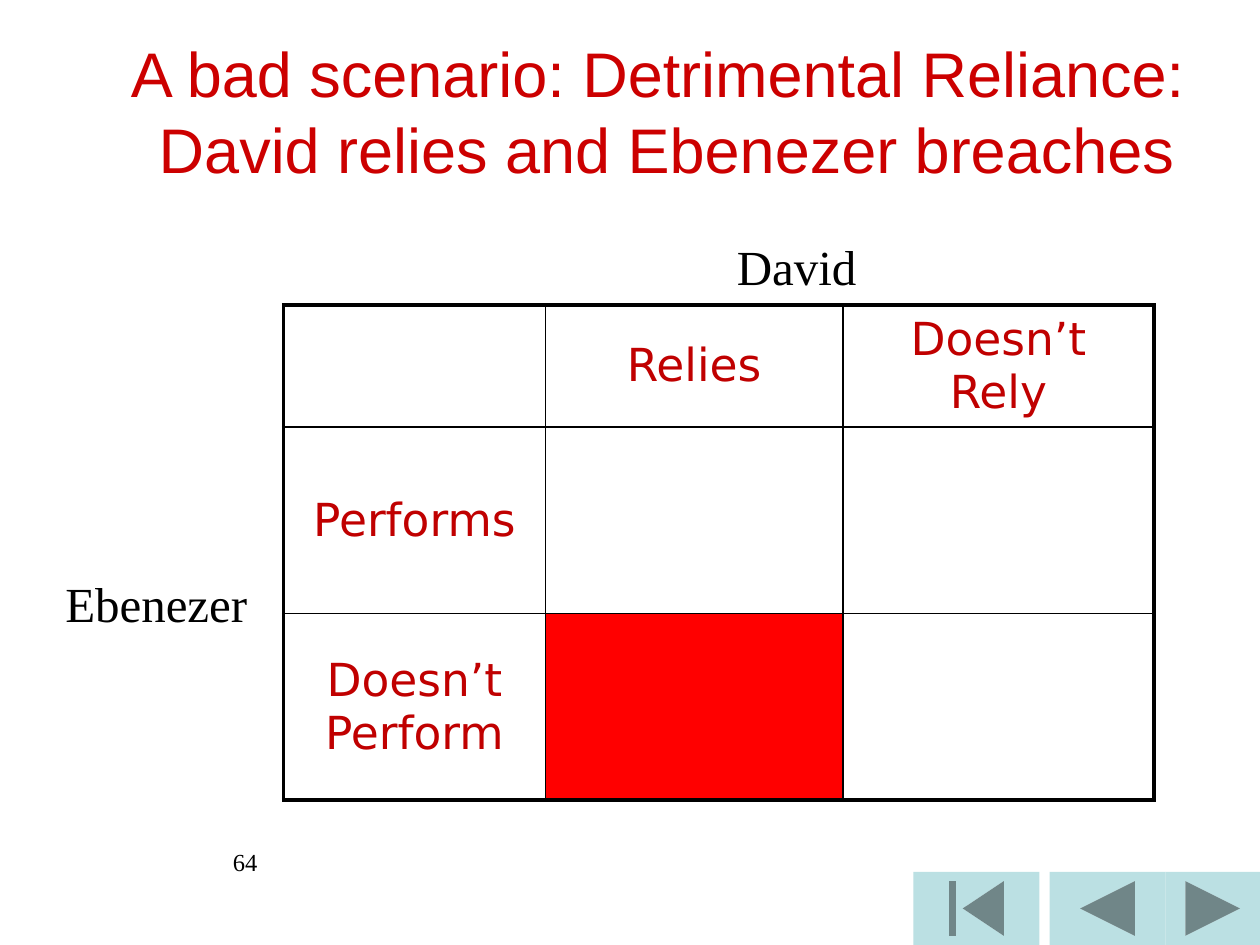
from dataclasses import dataclass

from lxml.etree import SubElement
from pptx import Presentation
from pptx.dml.color import RGBColor
from pptx.enum.shapes import MSO_SHAPE
from pptx.enum.text import MSO_ANCHOR, PP_ALIGN
from pptx.oxml.ns import qn
from pptx.slide import Slide
from pptx.util import Inches, Pt

BLACK = RGBColor(0x00, 0x00, 0x00)
WHITE = RGBColor(0xFF, 0xFF, 0xFF)
TITLE_RED = RGBColor(0xCC, 0x00, 0x00)
LABEL_RED = RGBColor(0xC0, 0x00, 0x00)
BREACH_RED = RGBColor(0xFF, 0x00, 0x00)
BUTTON_BLUE = RGBColor(0xBB, 0xE0, 0xE3)


@dataclass
class ScenarioSlide:
    slide: Slide
    title_font: str = "Arial"
    label_font: str = "Times New Roman"
    matrix_font: str = "DejaVu Sans"
    outer_line: float = 2.25
    inner_line: float = 1

    def add_run(self, paragraph, text, font, size, color):
        run = paragraph.add_run()
        run.text = text
        run.font.name = font
        run.font.size = Pt(size)
        run.font.color.rgb = color

    def button(self, preset, left, width):
        nav = self.slide.shapes.add_shape(
            preset, Inches(left), Inches(6.92), Inches(width), Inches(0.58))
        nav.shadow.inherit = False
        nav.fill.solid()
        nav.fill.fore_color.rgb = BUTTON_BLUE
        nav.line.fill.background()

    def text_frame(self, left, top, width, height):
        frame = self.slide.shapes.add_textbox(
            Inches(left), Inches(top), Inches(width), Inches(height)).text_frame
        frame.word_wrap = True
        return frame

    def label(self, text, left, top, width, height, size=28):
        paragraph = self.text_frame(left, top, width, height).paragraphs[0]
        self.add_run(paragraph, text, self.label_font, size, BLACK)

    def title(self, lines, left, top, width, height):
        frame = self.text_frame(left, top, width, height)
        frame.vertical_anchor = MSO_ANCHOR.MIDDLE
        paragraph = frame.paragraphs[0]
        paragraph.alignment = PP_ALIGN.CENTER
        for index, line in enumerate(lines):
            if index:
                paragraph.add_line_break()
            self.add_run(paragraph, line, self.title_font, 36, TITLE_RED)

    def borders(self, cell, outer_sides):
        properties = cell._tc.get_or_add_tcPr()
        for side in ("L", "R", "T", "B"):
            width = self.outer_line if side in outer_sides else self.inner_line
            line = SubElement(properties, qn(f"a:ln{side}"), w=str(Pt(width)))
            fill = SubElement(line, qn("a:solidFill"))
            SubElement(fill, qn("a:srgbClr"), val=str(BLACK))

    def matrix(self, rows, left, top, widths, heights, highlighted):
        table = self.slide.shapes.add_table(
            len(heights), len(widths), Inches(left), Inches(top),
            Inches(sum(widths)), Inches(sum(heights))).table
        table.first_row = False
        table.horz_banding = False
        for column, width in zip(table.columns, widths):
            column.width = Inches(width)
        for row, height in zip(table.rows, heights):
            row.height = Inches(height)
        for r, texts in enumerate(rows):
            for c, text in enumerate(texts):
                cell = table.cell(r, c)
                edges = {"L": c == 0, "R": c == len(widths) - 1,
                         "T": r == 0, "B": r == len(heights) - 1}
                self.borders(cell, [side for side in edges if edges[side]])
                cell.fill.solid()
                cell.fill.fore_color.rgb = BREACH_RED if (r, c) == highlighted else WHITE
                cell.vertical_anchor = MSO_ANCHOR.MIDDLE
                if text:
                    paragraph = cell.text_frame.paragraphs[0]
                    paragraph.alignment = PP_ALIGN.CENTER
                    self.add_run(paragraph, text, self.matrix_font, 26, LABEL_RED)


def main():
    presentation = Presentation()
    presentation.slide_width = Inches(10)
    presentation.slide_height = Inches(7.5)
    scenario = ScenarioSlide(presentation.slides.add_slide(presentation.slide_layouts[6]))

    scenario.button(MSO_SHAPE.ACTION_BUTTON_BACK_OR_PREVIOUS, 8.33, 0.92)
    scenario.button(MSO_SHAPE.ACTION_BUTTON_BEGINNING, 7.25, 1)
    scenario.button(MSO_SHAPE.ACTION_BUTTON_FORWARD_OR_NEXT, 9.25, 0.75)
    scenario.label("64", 1.75, 6.67, 6.08, 0.52, size=14)
    scenario.matrix(
        [["", "Relies", "Doesn’t Rely"],
         ["Performs", "", ""],
         ["Doesn’t Perform", "", ""]],
        2.25, 2.42, [2.08, 2.36, 2.47], [0.97, 1.48, 1.48], highlighted=(2, 1))
    scenario.label("David", 5.75, 1.83, 1.72, 0.57)
    scenario.label("Ebenezer", 0.42, 4.5, 1.83, 0.58)
    scenario.title(
        ["A bad scenario: Detrimental Reliance: ", "David relies and Ebenezer breaches"],
        0.58, 0.25, 9.42, 1.25)

    presentation.save("out.pptx")


if __name__ == "__main__":
    main()
